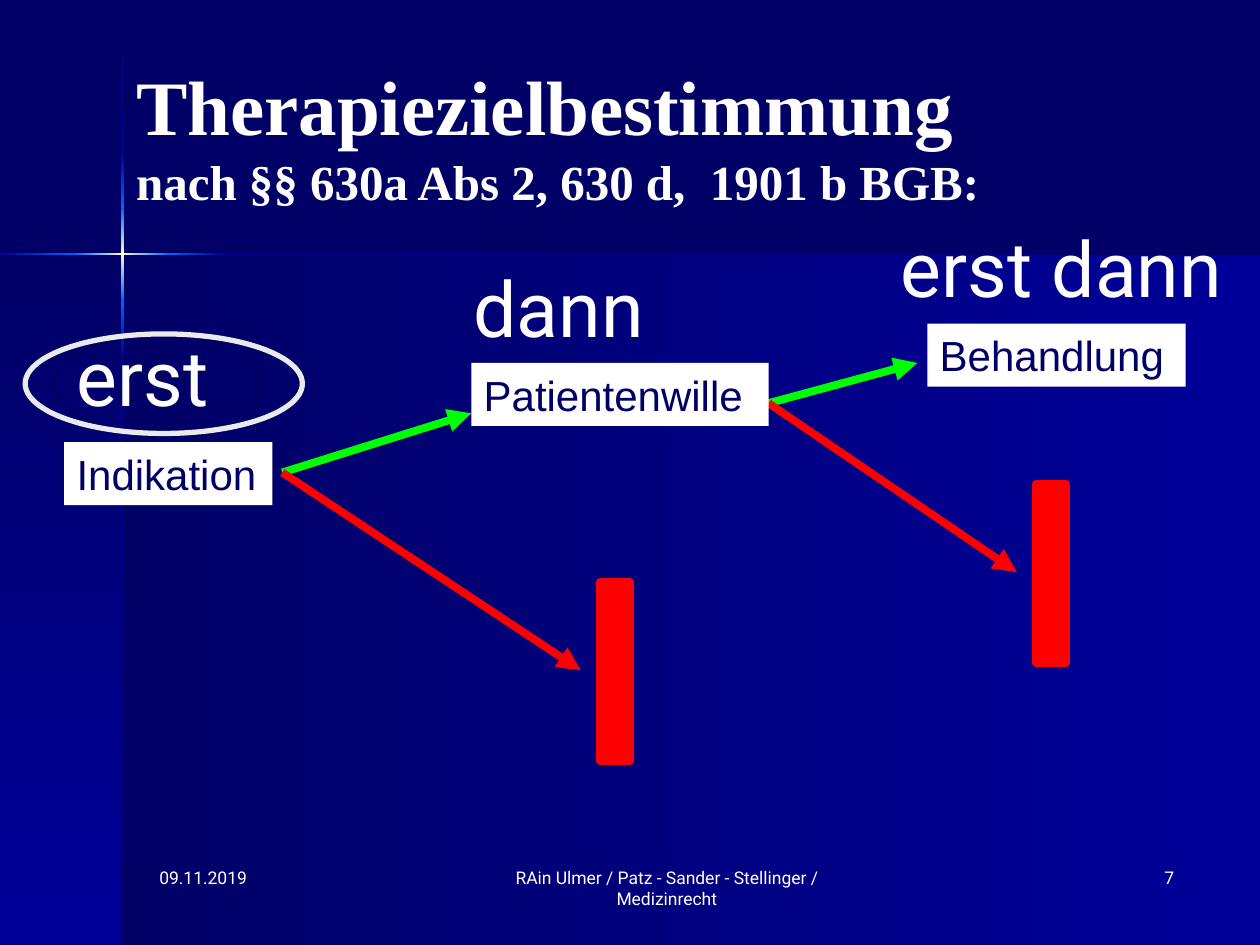
from lxml.etree import SubElement
from pptx import Presentation
from pptx.dml.color import RGBColor
from pptx.enum.shapes import MSO_CONNECTOR, MSO_SHAPE
from pptx.enum.text import MSO_ANCHOR, MSO_AUTO_SIZE, PP_ALIGN
from pptx.oxml.ns import qn
from pptx.util import Pt

COLORS = {
    "navy": "000066", "blue": "000099", "bright": "0066FF", "glow": "FFFFCC",
    "white": "FFFFFF", "green": "00FF00", "red": "FF0000", "pale": "EAEAEA",
}
TITLE = {"name": "Times New Roman", "size": Pt(44), "bold": True, "color": "white"}
SUBTITLE = {**TITLE, "size": Pt(28)}
CAPTION = {"name": "Roboto", "size": Pt(44), "color": "white"}
LABEL = {"name": "Arial", "size": Pt(24), "color": "navy"}
FOOTER = {"name": "Roboto", "size": Pt(10), "color": "white"}


def rgb(name):
    return RGBColor.from_string(COLORS[name])


def lengths(values):
    return [Pt(value) for value in values]


def add_run(paragraph, text, style):
    run = paragraph.add_run()
    run.text = text
    for attribute, value in style.items():
        if attribute == "color":
            run.font.color.rgb = rgb(value)
        else:
            setattr(run.font, attribute, value)


def add_figure(slide, kind, box, fill=None, line=None, width=0):
    shape = slide.shapes.add_shape(kind, *lengths(box))
    shape.shadow.inherit = False
    if fill:
        shape.fill.solid()
        shape.fill.fore_color.rgb = rgb(fill)
    else:
        shape.fill.background()
    if line:
        shape.line.color.rgb = rgb(line)
        shape.line.width = Pt(width)
    else:
        shape.line.fill.background()
    return shape


def add_gradient(slide, box, colors, downward):
    shape = add_figure(slide, MSO_SHAPE.RECTANGLE, box)
    shape.fill.gradient()
    shape.fill.gradient_angle = 270 if downward else 0
    for stop, position, color in zip(shape.fill.gradient_stops, (0, 1), colors):
        stop.position = position
        stop.color.rgb = rgb(color)


def add_text(slide, box, text, style, align=PP_ALIGN.LEFT, wrap=True):
    frame = slide.shapes.add_textbox(*lengths(box)).text_frame
    frame.word_wrap = wrap
    frame.paragraphs[0].alignment = align
    add_run(frame.paragraphs[0], text, style)


def add_label(slide, box, text):
    shape = add_figure(slide, MSO_SHAPE.RECTANGLE, box, "white")
    frame = shape.text_frame
    frame.vertical_anchor = MSO_ANCHOR.TOP
    frame.paragraphs[0].alignment = PP_ALIGN.LEFT
    add_run(frame.paragraphs[0], text, LABEL)


def add_arrow(slide, start, end, color):
    arrow = slide.shapes.add_connector(MSO_CONNECTOR.STRAIGHT, *lengths(start + end))
    arrow.line.color.rgb = rgb(color)
    arrow.line.width = Pt(4.5)
    SubElement(arrow.line._get_or_add_ln(), qn("a:tailEnd"), type="triangle")
    SubElement(arrow._element.spPr, qn("a:effectLst"))


def add_backdrop(slide, box, cross):
    left, top, width, height = box
    x, y = cross
    fill = slide.background.fill
    fill.solid()
    fill.fore_color.rgb = rgb("navy")
    bottom = height - y
    add_gradient(slide, (left + x, top + y, width - x, bottom), ("navy", "blue"), False)
    add_gradient(slide, (left, top + y, x, bottom), ("navy", "blue"), True)

    thickness = 1.4
    column = [(0, "navy"), (y - 58, "blue"), (y - 26, "bright"), (y, "glow"),
              (y + 26, "bright"), (y + 58, "blue"), (height, "navy")]
    row = [(0, "blue"), (x - 26, "bright"), (x, "glow"),
           (x + 26, "bright"), (x + 58, "blue"), (width, "navy")]
    for stops, downward in ((column, True), (row, False)):
        for (start, first), (end, second) in zip(stops, stops[1:]):
            if downward:
                part = (left + x - thickness / 2, top + start, thickness, end - start)
            else:
                part = (left + start, top + y - thickness / 2, end - start, thickness)
            add_gradient(slide, part, (first, second), downward)


def add_title(slide, box):
    title = slide.shapes.title
    title.left, title.top, title.width, title.height = lengths(box)
    frame = title.text_frame
    frame.auto_size = MSO_AUTO_SIZE.NONE
    frame.vertical_anchor = MSO_ANCHOR.MIDDLE
    paragraph = frame.paragraphs[0]
    paragraph.alignment = PP_ALIGN.LEFT
    add_run(paragraph, "Therapiezielbestimmung ", TITLE)
    paragraph.add_line_break()
    add_run(paragraph, "nach §§ 630a Abs 2, 630 d,  1901 b BGB:", SUBTITLE)


def add_footer(slide, box):
    left, top, width, height = box
    side, middle = 150, 228
    add_text(slide, (left, top, side, height), "09.11.2019", FOOTER)
    add_text(slide, (left + (width - middle) / 2, top, middle, height),
             "RAin Ulmer / Patz - Sander - Stellinger / Medizinrecht",
             FOOTER, PP_ALIGN.CENTER)
    add_text(slide, (left + width - side, top, side, height), "7", FOOTER, PP_ALIGN.RIGHT)


def add_decision_path(slide, box):
    left, top = box[:2]

    def place(x, y, *size):
        return (left + x, top + y, *size)

    forks = [
        ((146.9, 147.6), (254.9, 113.8), (317.5, 260.6)),
        ((424.8, 108), (509.8, 85), (566.6, 204.5)),
    ]
    for start, onward, stop in forks:
        add_arrow(slide, place(*start), place(*onward), "green")
        add_arrow(slide, place(*start), place(*stop), "red")
        add_figure(slide, MSO_SHAPE.RECTANGLE,
                   place(stop[0] + 11, stop[1] - 50.4, 17.3, 102.2), "red", "red", 4.5)

    steps = [
        ("Indikation", (22.3, 130.3, 119, 36), "erst", (22.3, 62.6, 113, 59.8)),
        ("Patientenwille", (254.9, 85, 170, 36), "dann", (249.1, 23, 136, 59.8)),
        ("Behandlung", (515.5, 62.6, 147.6, 36), "erst dann", (493.2, 0, 198, 59.8)),
    ]
    for label, label_box, caption, caption_box in steps:
        add_label(slide, place(*label_box), label)
        add_text(slide, place(*caption_box), caption, CAPTION, wrap=caption != "erst dann")

    for x, width, color in ((16.6, 118.8, "navy"), (0, 158.4, "pale")):
        add_figure(slide, MSO_SHAPE.OVAL, place(x, 68.4, width, 56.9), line=color, width=3)


def main():
    presentation = Presentation()
    presentation.slide_width, presentation.slide_height = Pt(720), Pt(540)
    slide = presentation.slides.add_slide(presentation.slide_layouts[5])
    add_backdrop(slide, (0, 0, 720, 540), (70, 145))
    add_title(slide, (70.6, 20.2, 617.8, 113))
    add_footer(slide, (84, 492, 594, 36))
    add_decision_path(slide, (14.4, 122.4, 691.2, 313))
    presentation.save("out.pptx")


if __name__ == "__main__":
    main()
